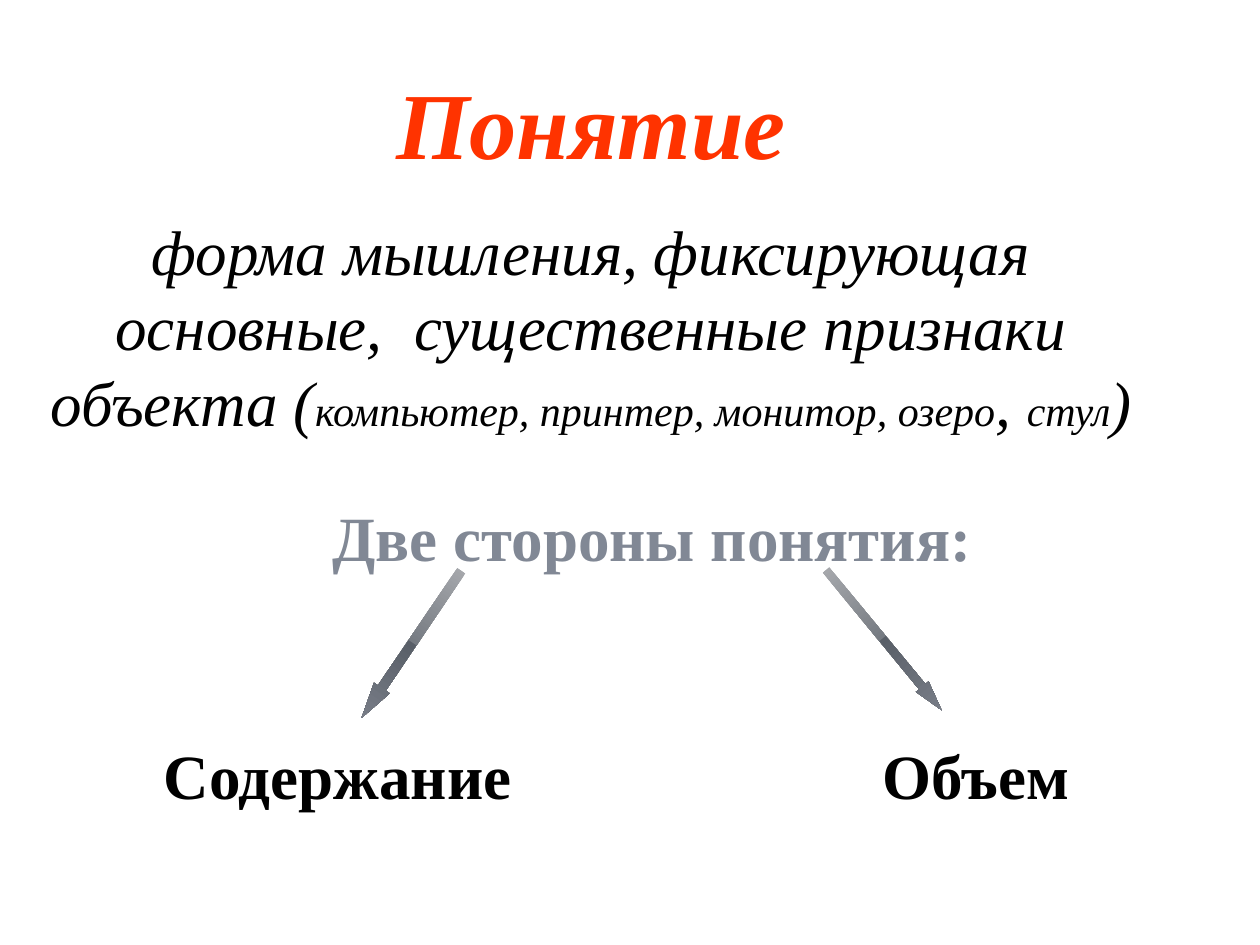
from lxml.etree import SubElement
from pptx import Presentation
from pptx.dml.color import RGBColor
from pptx.enum.shapes import MSO_SHAPE
from pptx.enum.text import PP_ALIGN
from pptx.oxml.ns import qn
from pptx.util import Inches, Pt

FONT = "Times New Roman"
RED, BLACK, GRAY = "FF3300", "000000", "818895"
BOLD, ITALIC = "bold", "italic"

DEFINITION = [
    [("Понятие", 54, RED, (BOLD, ITALIC))],
    [
        ("форма мышления, фиксирующая основные,  существенные признаки объекта (", 36, BLACK, (ITALIC,)),
        ("компьютер, принтер, монитор, озеро", 24, BLACK, (ITALIC,)),
        (", ", 36, BLACK, (ITALIC,)),
        ("стул", 24, BLACK, (ITALIC,)),
        (")", 36, BLACK, (ITALIC,)),
    ],
]


def heading(text, color):
    return [[(text, 36, color, (BOLD,))]]


TEXTS = [
    ((0, 0.47, 9.38, 3.13), DEFINITION),
    ((1.8, 3.91, 6.75, 0.7), heading("Две стороны понятия:", GRAY)),
    ((1.14, 5.8, 3.08, 0.7), heading("Содержание", BLACK)),
    ((5.87, 5.8, 3.75, 0.7), heading("Объем", BLACK)),
]
ARROWS = [
    ((3.19, 4.41, 0.15, 1.41), 34.1, 1.91),
    ((6.95, 4.36, 0.13, 1.44), 320.5, 1.85),
]
ARROW_STOPS = [(0, "A9ABAF"), (49, "767B82"), (49, "595F68"), (92, "757A84"), (100, "8A8E96")]


def rgb(value):
    return RGBColor.from_string(value)


def add_text(page, place, paragraphs):
    box = page.shapes.add_textbox(*map(Inches, place))
    frame = box.text_frame
    frame.word_wrap = True
    for index, spans in enumerate(paragraphs):
        para = frame.add_paragraph() if index else frame.paragraphs[0]
        para.alignment = PP_ALIGN.CENTER
        if index:
            para.space_before = Pt(19)
        for text, size, color, styles in spans:
            span = para.add_run()
            span.text = text
            span.font.name = FONT
            span.font.size = Pt(size)
            span.font.bold = BOLD in styles
            span.font.italic = ITALIC in styles
            span.font.color.rgb = rgb(color)


def add_arrow(page, place, rotation, head_length):
    arrow = page.shapes.add_shape(MSO_SHAPE.DOWN_ARROW, *map(Inches, place))
    arrow.rotation = rotation
    arrow.adjustments[0] = 0.5
    arrow.adjustments[1] = head_length
    arrow.shadow.inherit = False
    arrow.line.fill.background()
    arrow.fill.gradient()
    arrow.fill.gradient_angle = 270
    stops = arrow._element.spPr.find(qn("a:gradFill")).find(qn("a:gsLst"))
    for stop in list(stops):
        stops.remove(stop)
    for position, color in ARROW_STOPS:
        stop = SubElement(stops, qn("a:gs"), pos=str(position * 1000))
        SubElement(stop, qn("a:srgbClr"), val=color)


def main():
    deck = Presentation()
    deck.slide_width, deck.slide_height = Inches(10), Inches(7.5)
    page = deck.slides.add_slide(deck.slide_layouts[6])
    for place, paragraphs in TEXTS:
        add_text(page, place, paragraphs)
    for place, rotation, head_length in ARROWS:
        add_arrow(page, place, rotation, head_length)
    deck.save("out.pptx")


if __name__ == "__main__":
    main()
